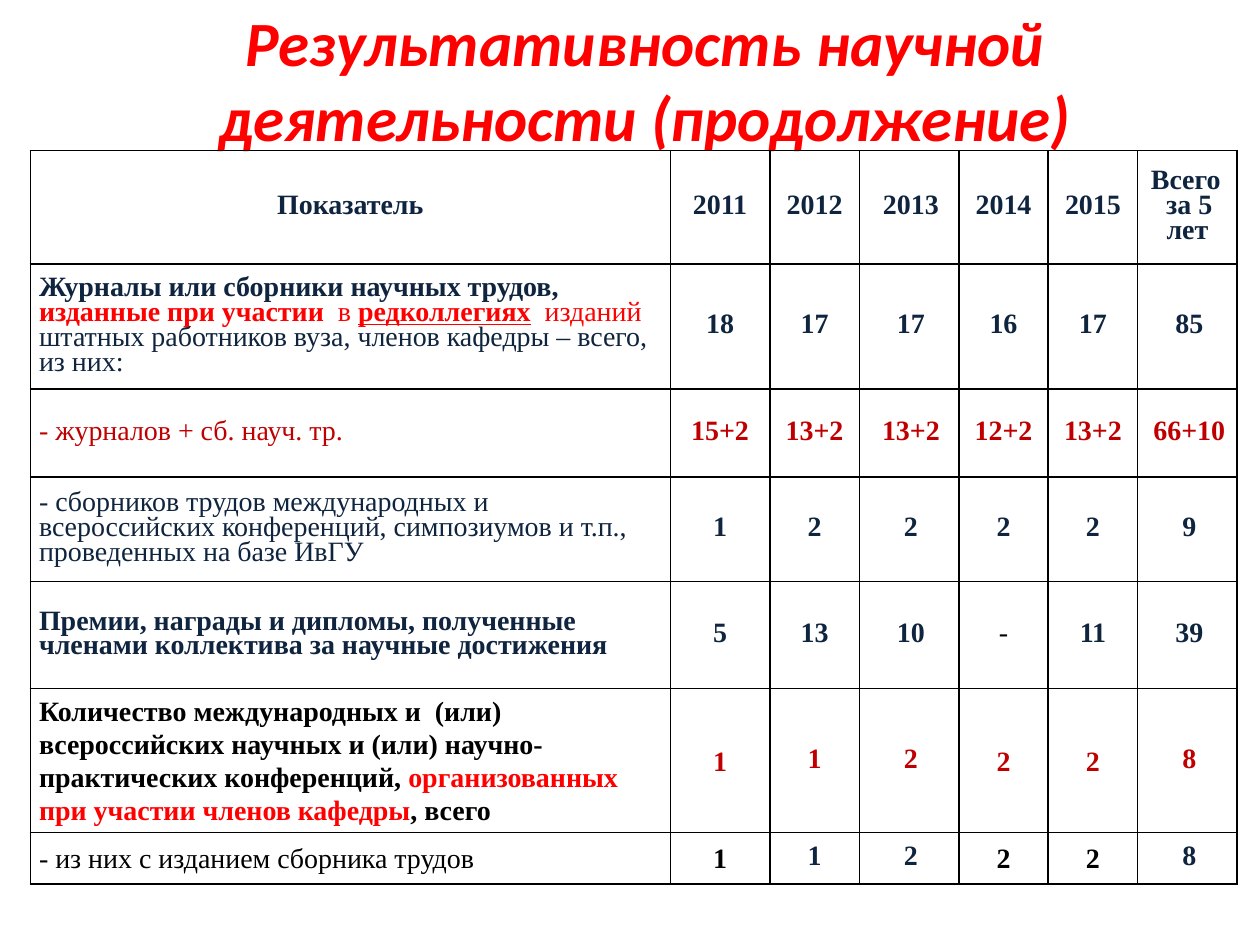
from lxml.etree import SubElement
from pptx import Presentation
from pptx.dml.color import RGBColor
from pptx.enum.text import MSO_ANCHOR, PP_ALIGN
from pptx.oxml import parse_xml
from pptx.oxml.ns import nsdecls
from pptx.util import Inches, Pt

NAVY, RED, DARK, BLACK = "0F243E", "FF0000", "C00000", "000000"


def put(para, text, color=NAVY, bold=True, size=16, face="Times New Roman", slant=False, under=False):
    run = para.add_run()
    run.text = text
    font = run.font
    font.name, font.size = face, Pt(size)
    font.bold, font.italic, font.underline = bold, slant, under
    font.color.rgb = RGBColor.from_string(color)


deck = Presentation()
deck.slide_width, deck.slide_height = Inches(10), Inches(7.5)
col, row = deck.slide_width / 100, deck.slide_height / 100
slide = deck.slides.add_slide(deck.slide_layouts[6])

left = int(2.4 * col)
box = slide.shapes.add_textbox(left, 0, int(97.6 * col), int(16.67 * row))
frame = box.text_frame
frame.word_wrap = True
frame.vertical_anchor = MSO_ANCHOR.MIDDLE
title = frame.paragraphs[0]
title.alignment = PP_ALIGN.CENTER
put(title, "Результативность научной деятельности (продолжение)",
    color=RED, size=36, face="Calibri", slant=True)

widths = [50.8, 7.9, 7.1, 7.9, 7.1, 7.1, 7.9]
shifted = (3, 6)
loose = (0, 1, 4, 5)

head = [
    (12, [("Показатель", {})], ["2011", "2012", "2013", "2014", "2015", "Всего \nза 5 лет"], [NAVY] * 6),
]
body = [
    (13.2, [
        ("Журналы или сборники научных трудов, ", {}),
        ("изданные при участии ", {"color": RED}),
        (" в ", {"color": RED, "bold": False}),
        ("редколлегиях", {"color": RED, "under": True}),
        ("  изданий ", {"color": RED, "bold": False}),
        ("штатных работников вуза, членов кафедры – всего, из них:", {"bold": False}),
    ], ["18", "17", "17", "16", "17", "85"], [NAVY] * 6),
    (9.33, [("- журналов + сб. науч. тр.", {"color": DARK, "bold": False})],
     ["15+2", "13+2", "13+2", "12+2", "13+2", "66+10"], [DARK] * 6),
    (11.07, [("- сборников трудов международных и всероссийских конференций, "
              "симпозиумов и т.п., проведенных на базе ИвГУ", {"bold": False})],
     ["1", "2", "2", "2", "2", "9"], [NAVY] * 6),
    (11.33, [("Премии, награды и дипломы, полученные членами коллектива за научные достижения", {})],
     ["5", "13", "10", "-", "11", "39"], [NAVY, NAVY, NAVY, BLACK, NAVY, NAVY]),
]
foot = [
    (14.13, [
        ("Количество международных и  (или) всероссийских научных и (или) "
         "научно-практических конференций, ", {"color": BLACK}),
        ("организованных при участии членов кафедры", {"color": RED}),
        (", всего", {"color": BLACK}),
    ], ["1", "1", "2", "2", "2", "8"], [DARK] * 6),
    (5.47, [("- из них с изданием сборника трудов", {"color": BLACK, "bold": False})],
     ["1", "1", "2", "2", "2", "8"], [BLACK, NAVY, NAVY, BLACK, BLACK, NAVY]),
]

top = 15.95
for part in (head, body, foot):
    tall = sum(line[0] for line in part)
    grid = slide.shapes.add_table(len(part), len(widths), left, int(top * row),
                                  int(sum(widths) * col), int(tall * row)).table
    top += tall
    grid.first_row = grid.horz_banding = False
    for n, width in enumerate(widths):
        grid.columns[n].width = int(width * col)

    for r, (height, label, values, colors) in enumerate(part):
        grid.rows[r].height = int(height * row)
        for c in range(len(widths)):
            cell = grid.cell(r, c)
            cell.fill.background()
            cell.vertical_anchor = MSO_ANCHOR.MIDDLE
            cell.margin_left = cell.margin_right = int(0.7 * col)
            cell.margin_top = cell.margin_bottom = 0

            props = cell._tc.get_or_add_tcPr()
            for n, side in enumerate("LRTB"):
                edge = parse_xml(f'<a:ln{side} {nsdecls("a")} w="12700"/>')
                fill = SubElement(edge, edge.tag.replace(f"ln{side}", "solidFill"))
                SubElement(fill, edge.tag.replace(f"ln{side}", "srgbClr"), val=BLACK)
                props.insert(n, edge)

            if c == 0:
                lines = [label]
            else:
                tint = {"color": colors[c - 1], "bold": values[c - 1] != "-"}
                lines = [[(text, tint)] for text in values[c - 1].split("\n")]
            for n, runs in enumerate(lines):
                para = cell.text_frame.add_paragraph() if n else cell.text_frame.paragraphs[0]
                para.line_spacing = 1.07 if part is foot and c in loose else 0.8
                para.alignment = PP_ALIGN.CENTER if c or part is head else PP_ALIGN.LEFT
                if c in shifted:
                    ppr = para._p.get_or_add_pPr()
                    ppr.set("marL", "0")
                    ppr.set("indent", str(int(0.3 * col)))
                for text, style in runs:
                    put(para, text, **style)

deck.save("out.pptx")
